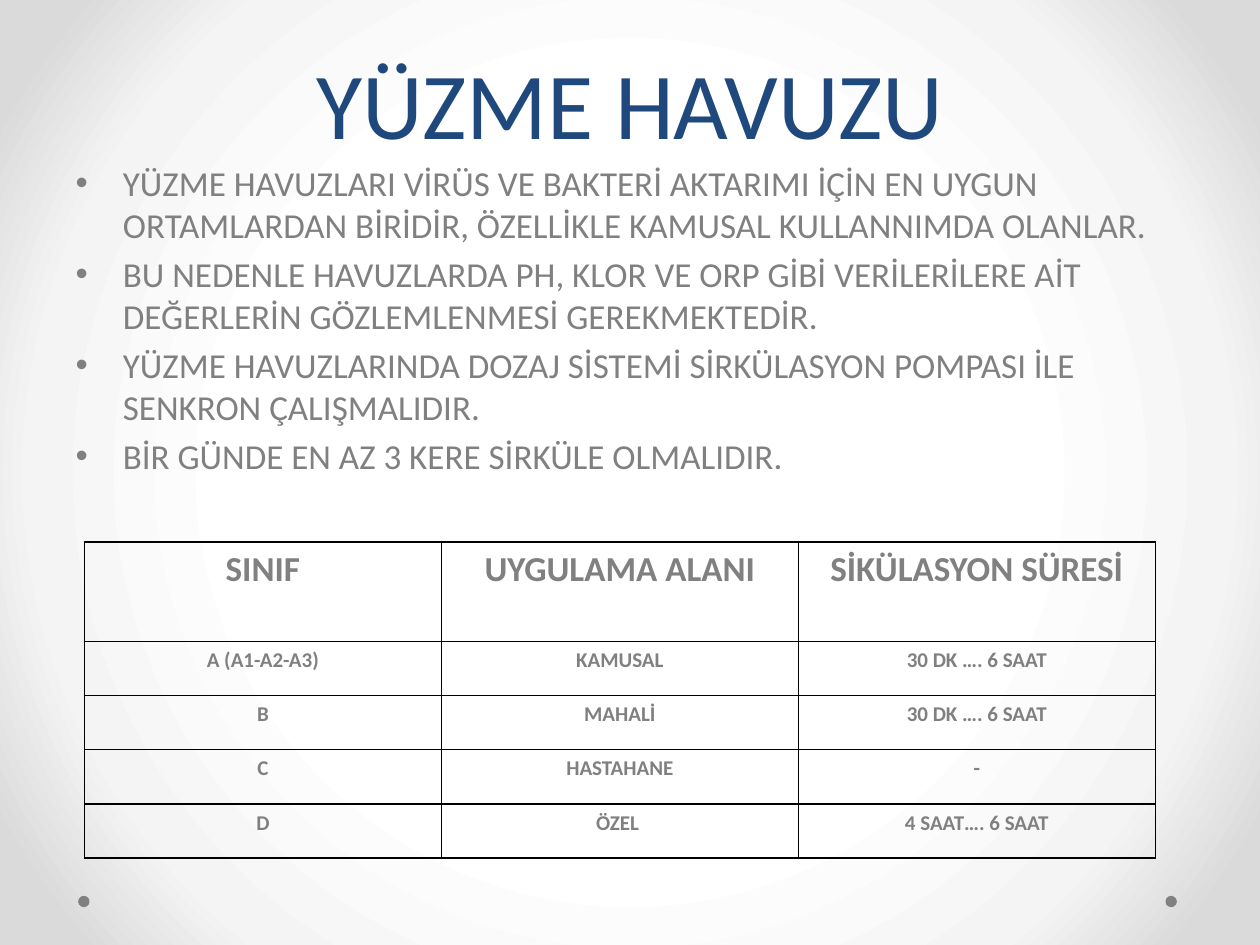
from lxml.etree import SubElement
from pptx import Presentation
from pptx.dml.color import RGBColor
from pptx.enum.shapes import MSO_SHAPE as Shape
from pptx.enum.text import MSO_ANCHOR as Anchor, MSO_AUTO_SIZE as AutoSize, PP_ALIGN as Align
from pptx.oxml import parse_xml
from pptx.oxml.ns import nsdecls, qn
from pptx.util import Inches, Pt

GREY, NAVY = "808080", "1F497D"
BULLETS = [
    "YÜZME HAVUZLARI VİRÜS VE BAKTERİ AKTARIMI İÇİN EN UYGUN ORTAMLARDAN BİRİDİR, "
    "ÖZELLİKLE KAMUSAL KULLANNIMDA OLANLAR.",
    "BU NEDENLE HAVUZLARDA PH, KLOR VE ORP GİBİ VERİLERİLERE AİT DEĞERLERİN "
    "GÖZLEMLENMESİ GEREKMEKTEDİR.",
    "YÜZME HAVUZLARINDA DOZAJ SİSTEMİ SİRKÜLASYON POMPASI İLE SENKRON ÇALIŞMALIDIR.",
    "BİR GÜNDE EN AZ 3 KERE SİRKÜLE OLMALIDIR.",
]
POOL_CLASSES = [
    ("SINIF", "UYGULAMA ALANI", "SİKÜLASYON SÜRESİ"),
    ("A (A1-A2-A3)", "KAMUSAL", "30 DK …. 6 SAAT"),
    ("B", "MAHALİ", "30 DK …. 6 SAAT"),
    ("C", "HASTAHANE", "-"),
    ("D", "ÖZEL ", "4 SAAT…. 6 SAAT"),
]


def style(paragraph, size, color, bold=False):
    for run in paragraph.runs:
        run.font.name, run.font.size, run.font.bold = "Calibri", Pt(size), bold
        run.font.color.rgb = RGBColor.from_string(color)


def place(shape, left, top, width, height):
    shape.left, shape.top = Inches(left), Inches(top)
    shape.width, shape.height = Inches(width), Inches(height)


deck = Presentation()
deck.slide_width, deck.slide_height = Inches(10), Inches(7.5)
slide = deck.slides.add_slide(deck.slide_layouts[1])

# Radial background, white in the middle
stops = "".join(
    f'<a:gs pos="{share * 1000}"><a:srgbClr val="{color}"/></a:gs>'
    for share, color in [(50, "FFFFFF"), (76, "F4F4F4"), (92, "DADADA")]
)
slide.element.cSld.insert(0, parse_xml(
    f'<p:bg {nsdecls("p", "a")}><p:bgPr><a:gradFill rotWithShape="1"><a:gsLst>{stops}</a:gsLst>'
    '<a:path path="circle"><a:fillToRect l="50000" t="50000" r="50000" b="50000"/></a:path>'
    '</a:gradFill><a:effectLst/></p:bgPr></p:bg>'
))

# Corner dots
for dot_left in (9.25, 0.62):
    dot = slide.shapes.add_shape(Shape.OVAL, Inches(dot_left), Inches(7.11), Inches(0.09), Inches(0.09))
    dot.shadow.inherit = False
    dot.fill.solid()
    dot.fill.fore_color.rgb = RGBColor.from_string(GREY)
    dot.line.fill.background()

# Title
title = slide.shapes.title
place(title, 0.5, 0.39, 9, 0.92)
title.text_frame.text = "YÜZME HAVUZU"
title.text_frame.auto_size = AutoSize.NONE
title.text_frame.vertical_anchor = Anchor.BOTTOM
heading = title.text_frame.paragraphs[0]
heading.alignment, heading.line_spacing = Align.CENTER, Pt(58)
style(heading, 54, NAVY)

# Bulleted list
body = slide.placeholders[1]
place(body, 0.5, 1.23, 9, 2.99)
body.text_frame.text = "\n".join(BULLETS)
body.text_frame.auto_size = AutoSize.NONE
for point in body.text_frame.paragraphs:
    style(point, 20, GREY)

# Pool class table
table = slide.shapes.add_table(
    len(POOL_CLASSES), 3, Inches(0.67), Inches(4.3), Inches(8.5), Inches(2.52)
).table
table.first_row = table.horz_banding = False
for r, entries in enumerate(POOL_CLASSES):
    size = 12 if r else 20
    table.rows[r].height = Inches(0.43 if r else 0.79)
    for c, entry in enumerate(entries):
        cell = table.cell(r, c)
        cell.text_frame.text = entry
        label = cell.text_frame.paragraphs[0]
        label.alignment, label.space_before = Align.CENTER, Pt(size * 0.2)
        style(label, size, GREY, bold=True)
        borders = cell._tc.get_or_add_tcPr()
        for side in ("a:lnL", "a:lnR", "a:lnT", "a:lnB"):
            edge = SubElement(borders, qn(side), w=str(Pt(1)))
            SubElement(SubElement(edge, qn("a:solidFill")), qn("a:srgbClr"), val="000000")
        cell.fill.background()

deck.save("out.pptx")
